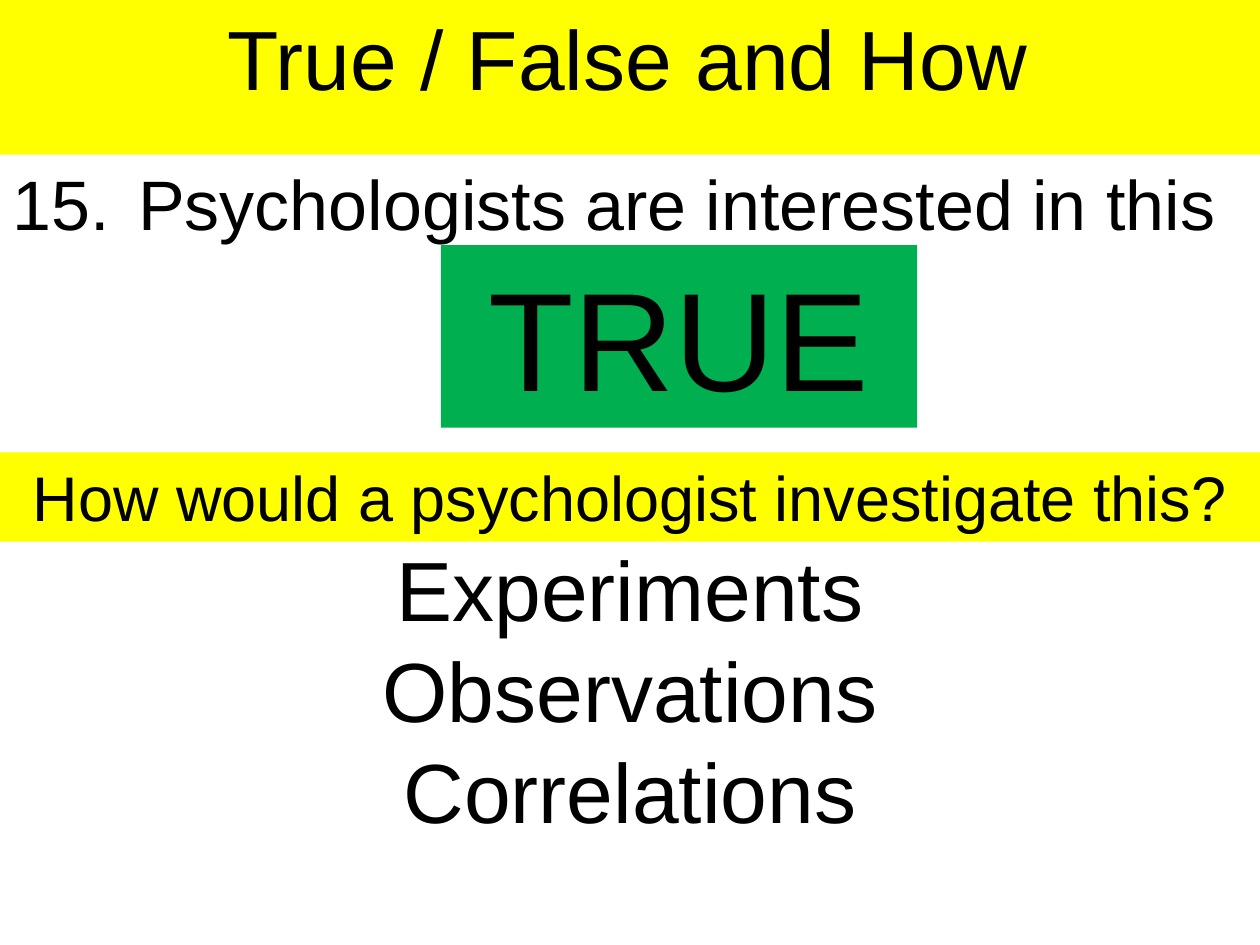
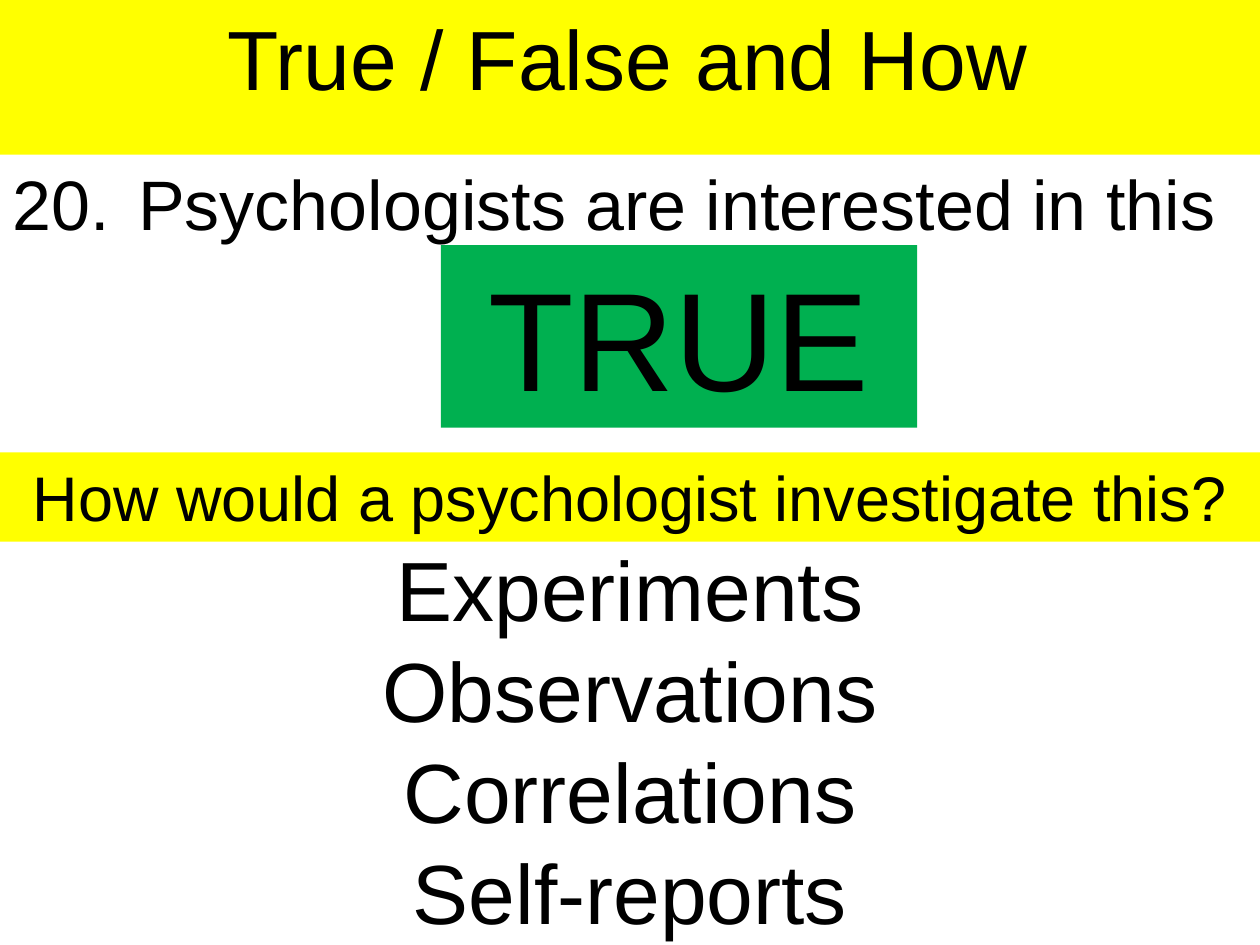
import pptx
import pptx.util
import pptx.dml.color
import pptx.enum.shapes
import pptx.enum.text

Cm = pptx.util.Cm
ALIGN = pptx.enum.text.PP_ALIGN
AUTO = pptx.enum.text.MSO_AUTO_SIZE

TITLE = "True / False and How"
STATEMENT = "Psychologists are interested in this"
ANSWER = "TRUE"
QUESTION = "How would a psychologist investigate this?"
METHODS = ["Experiments", "Observations", "Correlations", "Self-reports"]
SLIDES = [(15, METHODS[:3]), (20, METHODS)]

YELLOW = pptx.dml.color.RGBColor(0xFF, 0xFF, 0x00)
GREEN = pptx.dml.color.RGBColor(0x00, 0xB0, 0x50)
BLACK = pptx.dml.color.RGBColor(0x00, 0x00, 0x00)
FONT = "Arial"
WIDTH, HEIGHT = 25.4, 19.05

TITLE_BOX = (-0.1, 0, WIDTH + 0.1, 3.12)
STATEMENT_BOX = (0, 3.12, WIDTH, 1.97)
ANSWER_BOX = (8.89, 4.94, 9.6, 3.68)
QUESTION_BOX = (0, 9.12, WIDTH, 1.8)
METHODS_BOX = (0, 10.72, WIDTH, HEIGHT)


def add_text(s, box, lines, size, fill=None, align=ALIGN.CENTER, grow=True):
    place = [Cm(v) for v in box]
    if fill is None:
        sp = s.shapes.add_textbox(*place)
    else:
        sp = s.shapes.add_shape(pptx.enum.shapes.MSO_SHAPE.RECTANGLE, *place)
        sp.shadow.inherit = False
        sp.fill.solid()
        sp.fill.fore_color.rgb = fill
        sp.line.fill.background()
    tf = sp.text_frame
    tf.text = "\n".join(lines)
    tf.word_wrap = True
    tf.vertical_anchor = pptx.enum.text.MSO_ANCHOR.TOP
    tf.auto_size = AUTO.SHAPE_TO_FIT_TEXT if grow else AUTO.NONE
    for p in tf.paragraphs:
        p.alignment = align
        for r in p.runs:
            r.font.name = FONT
            r.font.size = pptx.util.Pt(size)
            r.font.color.rgb = BLACK


def add_answer_slide(prs, number, methods):
    s = prs.slides.add_slide(prs.slide_layouts[6])
    add_text(s, TITLE_BOX, [TITLE], 48, YELLOW, grow=False)
    add_text(s, STATEMENT_BOX, [f"{number}.\t{STATEMENT}"], 40, align=ALIGN.LEFT)
    add_text(s, ANSWER_BOX, [ANSWER], 80, GREEN)
    add_text(s, QUESTION_BOX, [QUESTION], 36, YELLOW)
    add_text(s, METHODS_BOX, methods, 48, grow=False)


def main():
    prs = pptx.Presentation()
    prs.slide_width, prs.slide_height = Cm(WIDTH), Cm(HEIGHT)
    for number, methods in SLIDES:
        add_answer_slide(prs, number, methods)
    prs.save("out.pptx")


if __name__ == "__main__":
    main()
